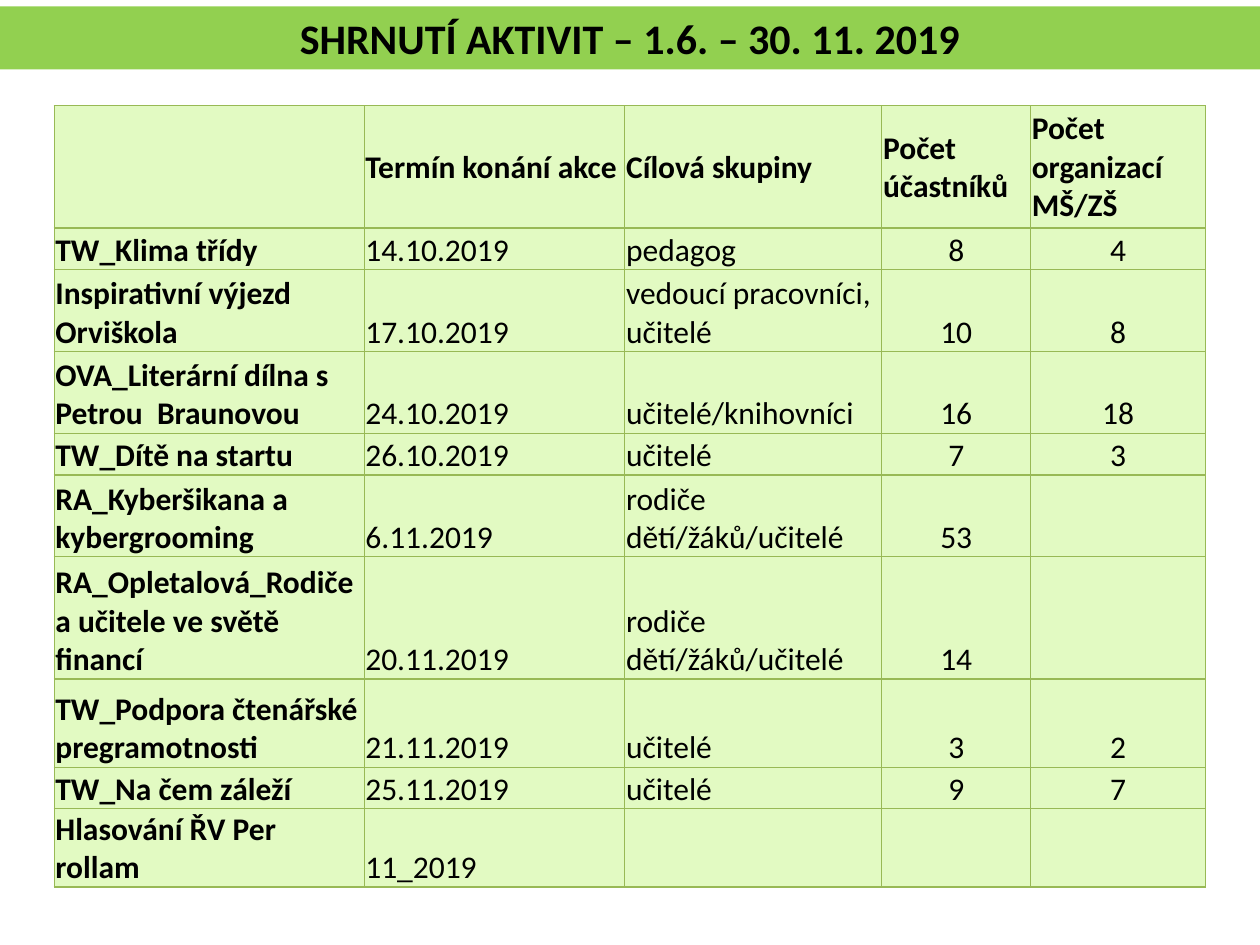
from typing import NamedTuple

from lxml import etree
from pptx import Presentation
from pptx import util as u
from pptx.dml.color import RGBColor
from pptx.enum import text
from pptx.oxml import ns

FONT = "Calibri"
BLACK, BAND_GREEN, CELL_GREEN, BORDER_GREEN = "000000", "92D050", "E2FAC2", "98B955"
COLUMN_WIDTHS = [2.46, 2.07, 2.04, 1.18, 1.39]
FIRST_COUNT_COLUMN = 3


class Activity(NamedTuple):
    height: float
    name: str
    date: str
    audience: str = ""
    participants: str = ""
    organizations: str = ""


ACTIVITIES = [
    Activity(0.97, "", "Termín konání akce", "Cílová skupiny",
             "Počet účastníků", "Počet organizací MŠ/ZŠ"),
    Activity(0.33, "TW_Klima třídy", "14.10.2019", "pedagog", "8", "4"),
    Activity(0.65, "Inspirativní výjezd Orviškola", "17.10.2019",
             "vedoucí pracovníci, učitelé", "10", "8"),
    Activity(0.65, "OVA_Literární dílna s Petrou  Braunovou", "24.10.2019",
             "učitelé/knihovníci", "16", "18"),
    Activity(0.33, "TW_Dítě na startu", "26.10.2019", "učitelé", "7", "3"),
    Activity(0.65, "RA_Kyberšikana a kybergrooming", "6.11.2019",
             "rodiče dětí/žáků/učitelé", "53"),
    Activity(0.97, "RA_Opletalová_Rodiče a učitele ve světě financí", "20.11.2019",
             "rodiče dětí/žáků/učitelé", "14"),
    Activity(0.7, "TW_Podpora čtenářské pregramotnosti", "21.11.2019", "učitelé", "3", "2"),
    Activity(0.33, "TW_Na čem záleží", "25.11.2019", "učitelé", "9", "7"),
    Activity(0.61, "Hlasování ŘV Per rollam", "11_2019"),
]


def color(hex_value: str) -> RGBColor:
    return RGBColor.from_string(hex_value)


def fill(target, hex_value: str) -> None:
    target.fill.solid()
    target.fill.fore_color.rgb = color(hex_value)


def write(frame, words: str, *, size: float = 18, bold: bool = False,
          centered: bool = False) -> None:
    paragraph = frame.paragraphs[0]
    paragraph.alignment = text.PP_ALIGN.CENTER if centered else text.PP_ALIGN.LEFT
    font = paragraph.font
    if words:
        run = paragraph.add_run()
        run.text = words
        font = run.font
    font.name, font.size, font.bold = FONT, u.Pt(size), bold
    font.color.rgb = color(BLACK)


def add_borders(cell, hex_value: str, width: float) -> None:
    properties = cell._tc.get_or_add_tcPr()
    for side in ("a:lnL", "a:lnR", "a:lnT", "a:lnB"):
        line = etree.SubElement(properties, ns.qn(side), w=str(u.Pt(width)))
        solid = etree.SubElement(line, ns.qn("a:solidFill"))
        etree.SubElement(solid, ns.qn("a:srgbClr"), val=hex_value)


def add_title(slide, words: str) -> None:
    title = slide.shapes.title
    title.left, title.top = u.Inches(0), u.Inches(0.05)
    title.width, title.height = u.Inches(10), u.Inches(0.5)
    fill(title, BAND_GREEN)
    frame = title.text_frame
    frame.auto_size = text.MSO_AUTO_SIZE.NONE
    frame.vertical_anchor = text.MSO_ANCHOR.MIDDLE
    write(frame, words, size=24, bold=True, centered=True)


def format_cell(cell, words: str, *, header: bool, column: int) -> None:
    cell.margin_left = cell.margin_right = cell.margin_top = u.Inches(0.01)
    cell.margin_bottom = 0
    cell.vertical_anchor = text.MSO_ANCHOR.MIDDLE if header else text.MSO_ANCHOR.BOTTOM
    add_borders(cell, BORDER_GREEN, 0.75)
    fill(cell, CELL_GREEN)
    write(cell.text_frame, words, bold=header or column == 0,
          centered=not header and column >= FIRST_COUNT_COLUMN)


def add_activity_table(slide, activities: list[Activity]) -> None:
    table = slide.shapes.add_table(
        len(activities), len(COLUMN_WIDTHS), u.Inches(0.43), u.Inches(0.84),
        u.Inches(sum(COLUMN_WIDTHS)), u.Inches(sum(a.height for a in activities))).table
    table.first_row = table.horz_banding = False
    for column, width in zip(table.columns, COLUMN_WIDTHS):
        column.width = u.Inches(width)
    for row_index, (row, activity) in enumerate(zip(table.rows, activities)):
        row.height = u.Inches(activity.height)
        for column_index, (cell, words) in enumerate(zip(row.cells, activity[1:])):
            format_cell(cell, words, header=row_index == 0, column=column_index)


def main() -> None:
    deck = Presentation()
    deck.slide_width, deck.slide_height = u.Inches(10), u.Inches(7.5)
    slide = deck.slides.add_slide(deck.slide_layouts.get_by_name("Title Only"))
    add_title(slide, "SHRNUTÍ AKTIVIT – 1.6. – 30. 11. 2019")
    add_activity_table(slide, ACTIVITIES)
    deck.save("out.pptx")


if __name__ == "__main__":
    main()
